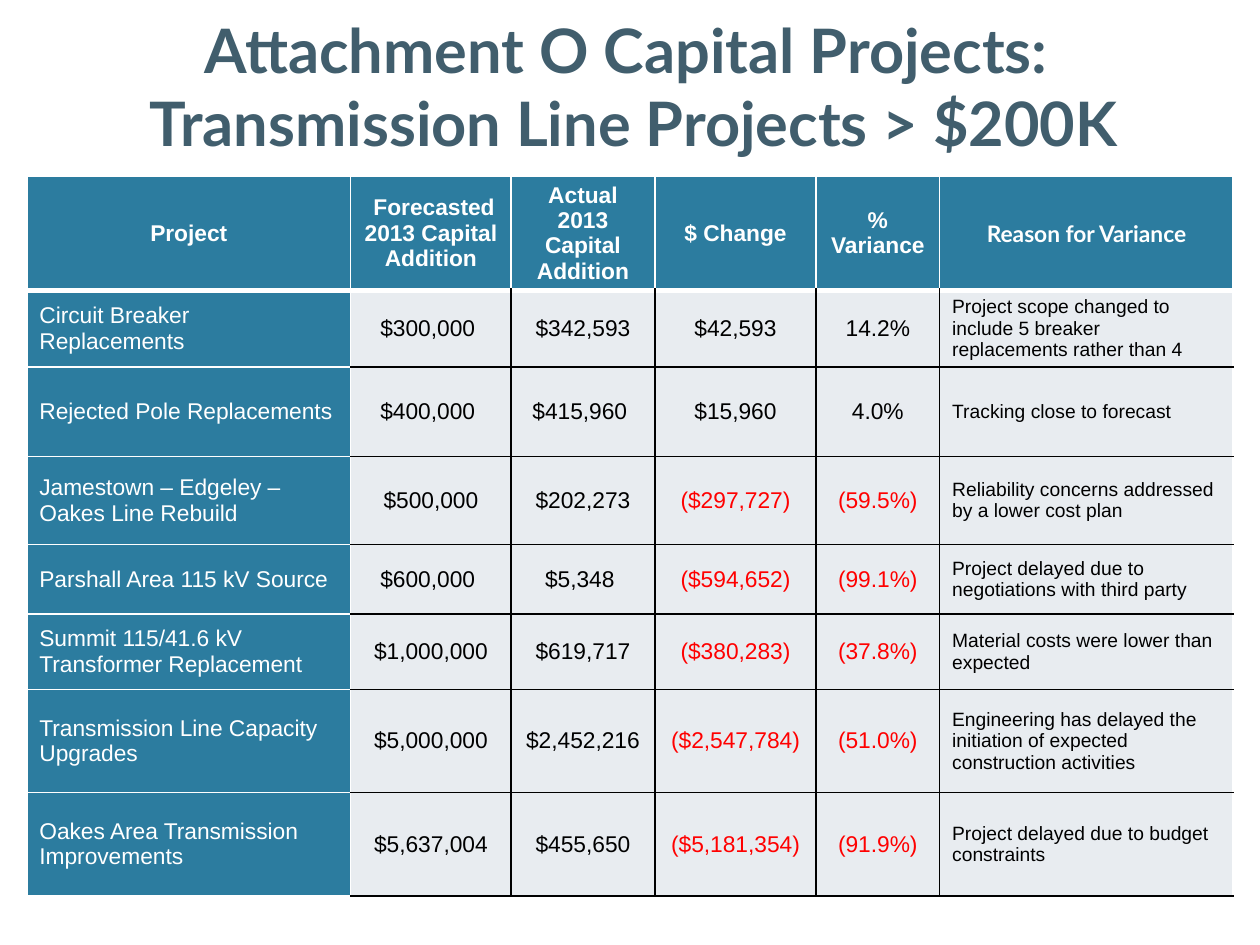
from lxml import etree
from pptx import Presentation
from pptx.dml.color import RGBColor
from pptx.enum import text
from pptx.oxml import ns
from pptx.util import Cm, Pt

# Content
TITLE = "Attachment O Capital Projects: \vTransmission Line Projects > $200K"
HEADERS = ["Project", " Forecasted 2013 Capital Addition", "Actual 2013 Capital Addition",
           "$ Change", "% Variance", "Reason for Variance"]
PROJECTS = [
    ("Circuit Breaker Replacements", "$300,000 ", "$342,593", "$42,593", "14.2%",
     "Project scope changed to include 5 breaker replacements rather than 4"),
    ("Rejected Pole Replacements", "$400,000 ", "$415,960 ", "$15,960", "4.0%",
     "Tracking close to forecast"),
    ("Jamestown – Edgeley – Oakes Line Rebuild", "$500,000", "$202,273", "($297,727)", "(59.5%)",
     "Reliability concerns addressed by a lower cost plan"),
    ("Parshall Area 115 kV Source", "$600,000 ", "$5,348 ", "($594,652)", "(99.1%)",
     "Project delayed due to negotiations with third party"),
    ("Summit 115/41.6 kV Transformer Replacement", "$1,000,000", "$619,717", "($380,283)", "(37.8%)",
     "Material costs were lower than expected"),
    ("Transmission Line Capacity Upgrades", "$5,000,000", "$2,452,216", "($2,547,784)", "(51.0%)",
     "Engineering has delayed the initiation of expected construction activities"),
    ("Oakes Area Transmission Improvements", "$5,637,004", "$455,650", "($5,181,354)", "(91.9%)",
     "Project delayed due to budget constraints"),
]
COLUMN_WIDTHS = [6.53, 3.23, 2.9, 3.25, 2.49, 5.92]
ROW_HEIGHTS = [2.29, 1.55, 1.8, 1.78, 1.4, 1.52, 2.08, 2.08]

SLATE = RGBColor(0x41, 0x5E, 0x6D)
TEAL = RGBColor(0x2C, 0x7C, 0x9F)
PALE = RGBColor(0xE8, 0xEC, 0xF0)
WHITE = RGBColor(0xFF, 0xFF, 0xFF)
BLACK = RGBColor(0x00, 0x00, 0x00)
RED = RGBColor(0xFF, 0x00, 0x00)


def set_font(para, name, size, color, bold=False):
    for span in para.runs:
        span.font.name = name
        span.font.size = Pt(size)
        span.font.bold = bold
        span.font.color.rgb = color


def set_borders(cell, borders):
    """Borders are (color, points) in the order left, right, top, bottom."""
    properties = cell._tc.get_or_add_tcPr()
    for index, (side, (color, width)) in enumerate(zip("LRTB", borders)):
        line = etree.Element(ns.qn(f"a:ln{side}"), w=str(Pt(width)))
        fill = etree.SubElement(line, ns.qn("a:solidFill"))
        etree.SubElement(fill, ns.qn("a:srgbClr"), val=str(color))
        properties.insert(index, line)


def format_cell(cell, row, column):
    header, project, reason = row == 0, column == 0, column == len(HEADERS) - 1
    dark = header or project
    cell.fill.solid()
    cell.fill.fore_color.rgb = TEAL if dark else PALE
    cell.vertical_anchor = text.MSO_ANCHOR.MIDDLE
    cell.margin_top = cell.margin_bottom = Cm(0.1)

    para = cell.text_frame.paragraphs[0]
    centred = header or not (project or reason)
    para.alignment = text.PP_ALIGN.CENTER if centred else text.PP_ALIGN.LEFT
    color = WHITE if dark else RED if para.text.startswith("(") else BLACK
    set_font(para, "Lato" if header and reason else "Arial",
             11 if reason and not header else 13, color, header)

    inner = WHITE if dark else BLACK
    set_borders(cell, [
        (WHITE if header or column <= 1 else BLACK, 1),
        (WHITE if dark or reason else BLACK, 1),
        (WHITE, 3) if row == 1 else (inner, 1),
        (WHITE, 3) if header else (inner, 1),
    ])


deck = Presentation()
deck.slide_width, deck.slide_height = Cm(25.4), Cm(19.05)
page = deck.slides.add_slide(deck.slide_layouts[5])

# Title
title = page.shapes.title
title.left, title.top, title.width, title.height = Cm(0.69), Cm(0.15), Cm(24.18), Cm(3.18)
title.text_frame.text = TITLE
title.text_frame.vertical_anchor = text.MSO_ANCHOR.BOTTOM
title.text_frame.paragraphs[0].alignment = text.PP_ALIGN.CENTER
set_font(title.text_frame.paragraphs[0], "Lato", 35, SLATE, True)

# Project table
rows = [HEADERS, *PROJECTS]
table = page.shapes.add_table(len(rows), len(HEADERS), Cm(0.54), Cm(3.56),
                              Cm(sum(COLUMN_WIDTHS)), Cm(sum(ROW_HEIGHTS))).table
for column, width in zip(table.columns, COLUMN_WIDTHS):
    column.width = Cm(width)
for row, height in zip(table.rows, ROW_HEIGHTS):
    row.height = Cm(height)
for r, values in enumerate(rows):
    for c, value in enumerate(values):
        table.cell(r, c).text_frame.text = value
        format_cell(table.cell(r, c), r, c)

deck.save("out.pptx")
